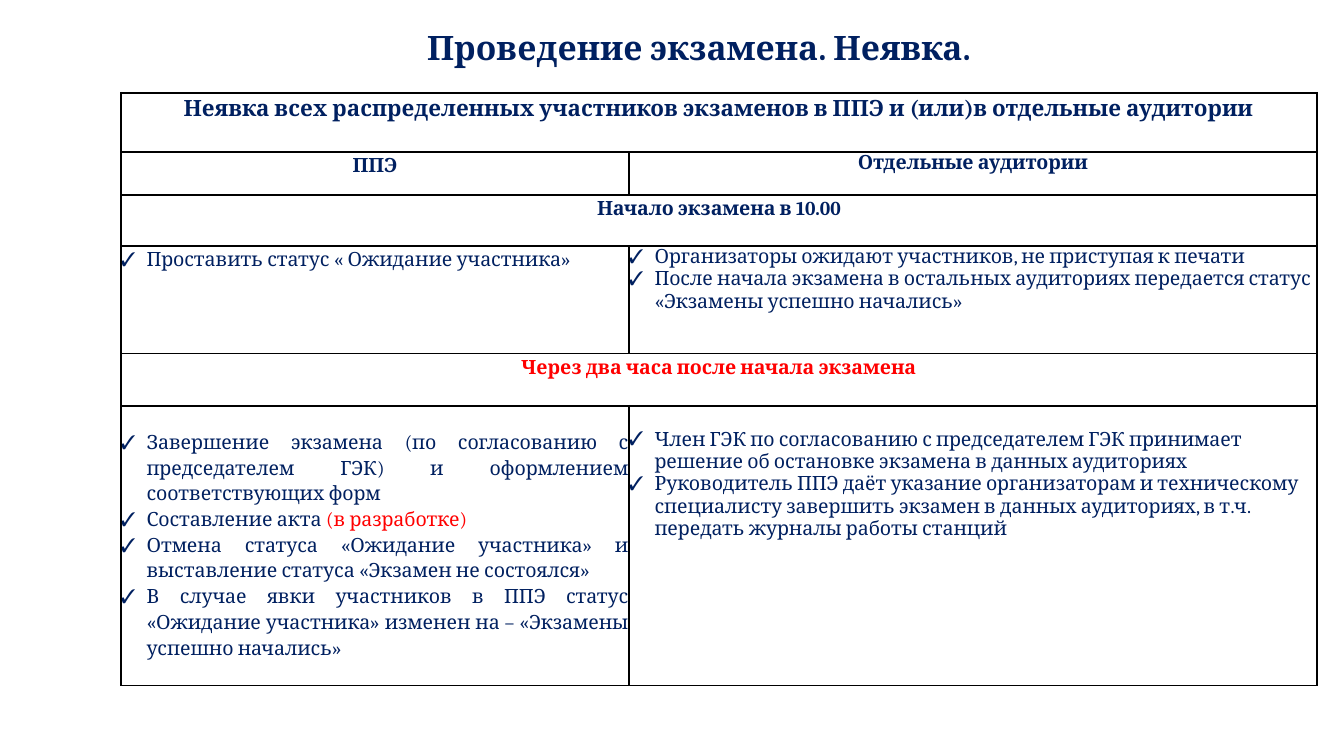
from lxml import etree
from pptx import Presentation
from pptx.dml.color import RGBColor
from pptx.enum.text import MSO_ANCHOR, PP_ALIGN
from pptx.oxml.ns import qn
from pptx.util import Inches, Pt

CENTER, LEFT, JUSTIFY = PP_ALIGN.CENTER, PP_ALIGN.LEFT, PP_ALIGN.JUSTIFY
MIDDLE = MSO_ANCHOR.MIDDLE
COLORS = {"navy": "002060", "red": "FF0000", "white": "FFFFFF", "black": "000000"}
FONT = "Cambria"


def write(text_frame, paragraphs, size=10.5, bold=False, color="navy",
          align=LEFT, spacing=1.0, bullet=None):
    """Fill a frame; a paragraph is a string or a list of (text, color) runs."""
    for index, content in enumerate(paragraphs):
        paragraph = text_frame.paragraphs[0] if index == 0 else text_frame.add_paragraph()
        paragraph.alignment = align
        paragraph.line_spacing = spacing
        if bullet:
            properties = paragraph._p.get_or_add_pPr()
            properties.set("marL", str(Inches(0.19)))
            properties.set("indent", str(-Inches(0.19)))
            etree.SubElement(properties, qn("a:buFont")).set("typeface", FONT)
            etree.SubElement(properties, qn("a:buChar")).set("char", bullet)
        runs = [(content, color)] if isinstance(content, str) else content
        for text, run_color in runs:
            run = paragraph.add_run()
            run.text = text
            run.font.name = FONT
            run.font.size = Pt(size)
            run.font.bold = bold
            run.font.color.rgb = RGBColor.from_string(COLORS[run_color])


def style_cell(cell):
    """Set zero margins, thin black borders and a white fill."""
    cell.margin_left = cell.margin_right = cell.margin_top = cell.margin_bottom = 0
    properties = cell._tc.get_or_add_tcPr()
    for side in ("lnL", "lnR", "lnT", "lnB"):
        line = etree.SubElement(properties, qn(f"a:{side}"), w=str(Pt(1)))
        fill = etree.SubElement(line, qn("a:solidFill"))
        etree.SubElement(fill, qn("a:srgbClr"), val=COLORS["black"])
    cell.fill.solid()
    cell.fill.fore_color.rgb = RGBColor.from_string(COLORS["white"])


presentation = Presentation()
presentation.slide_width = Inches(10)
presentation.slide_height = Inches(10) * 9 // 16
slide = presentation.slides.add_slide(presentation.slide_layouts[6])

title = slide.shapes.add_textbox(Inches(0.51), Inches(0.06), Inches(9), Inches(0.62))
title.text_frame.word_wrap = True
title.text_frame.vertical_anchor = MIDDLE
title.text_frame.margin_left = Inches(0.48)
write(title.text_frame, ["Проведение экзамена. Неявка."],
      size=18, bold=True, align=CENTER, spacing=0.9)

column_widths = [3.78, 5.12]
row_heights = [0.44, 0.32, 0.38, 0.8, 0.39, 2.08]
table = slide.shapes.add_table(
    len(row_heights), len(column_widths), Inches(0.9), Inches(0.69),
    Inches(sum(column_widths)), Inches(sum(row_heights))).table
table.first_row = table.horz_banding = False
for column, width in zip(table.columns, column_widths):
    column.width = Inches(width)
for row, height in zip(table.rows, row_heights):
    row.height = Inches(height)
for cell in table.iter_cells():
    style_cell(cell)

heading = {"bold": True, "align": CENTER, "spacing": 1.15}
checklist = {"bullet": "✓"}
contents = [
    (0, 0, ["Неявка всех распределенных участников экзаменов в ППЭ и (или)в отдельные аудитории"],
     {**heading, "size": 12}),
    (1, 0, ["ППЭ"], heading),
    (1, 1, ["Отдельные аудитории"], {**heading, "spacing": 1.0}),
    (2, 0, ["Начало экзамена в 10.00"], heading),
    (3, 0, ["Проставить статус « Ожидание участника»"], {**checklist, "spacing": 1.15}),
    (3, 1, ["Организаторы ожидают участников, не приступая к печати",
            "После начала экзамена в остальных аудиториях передается статус "
            "«Экзамены успешно начались»"], checklist),
    (4, 0, ["Через два часа после начала экзамена"], {**heading, "color": "red"}),
    (5, 0, ["Завершение экзамена (по согласованию с председателем ГЭК) и оформлением "
            "соответствующих форм",
            [("Составление акта ", "navy"), ("(в разработке)", "red")],
            "Отмена статуса «Ожидание участника» и выставление статуса "
            "«Экзамен не состоялся»",
            "В случае явки участников в ППЭ статус «Ожидание участника» изменен на – "
            "«Экзамены успешно начались»"],
     {**checklist, "align": JUSTIFY, "spacing": 1.15}),
    (5, 1, ["Член ГЭК по согласованию с председателем ГЭК принимает решение "
            "об остановке экзамена в данных аудиториях",
            "Руководитель ППЭ даёт указание организаторам и техническому специалисту "
            "завершить экзамен в данных аудиториях, в т.ч. передать журналы работы станций"],
     checklist),
]
for row_index in (0, 2, 4):
    table.cell(row_index, 0).merge(table.cell(row_index, 1))
for column_index in range(len(column_widths)):
    table.cell(5, column_index).margin_top = Inches(0.17)
for row_index, column_index, paragraphs, text_format in contents:
    write(table.cell(row_index, column_index).text_frame, paragraphs, **text_format)

presentation.save("out.pptx")
